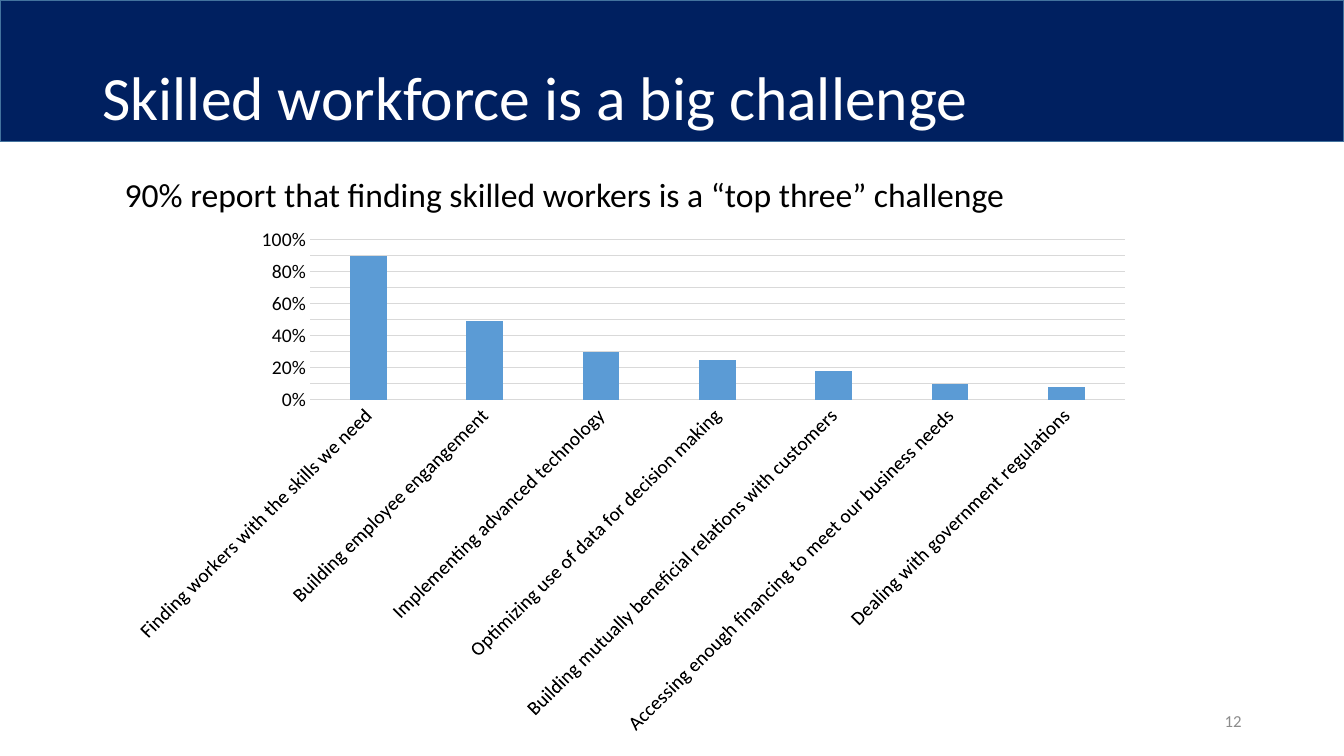
from pptx import Presentation
from pptx.chart.data import CategoryChartData
from pptx.dml.color import RGBColor
from pptx.enum.chart import XL_CHART_TYPE, XL_TICK_MARK
from pptx.enum.shapes import MSO_SHAPE
from pptx.enum.text import MSO_ANCHOR, MSO_AUTO_SIZE, PP_ALIGN
from pptx.util import Pt

HEADLINE = "Skilled workforce is a big challenge"
FINDING = "90% report that finding skilled workers is a “top three” challenge"
PAGE = "12"
CHALLENGES = {
    "Finding workers with the skills we need": 0.9,
    "Building employee engangement": 0.49,
    "Implementing advanced technology": 0.3,
    "Optimizing use of data for decision making": 0.25,
    "Building mutually beneficial relations with customers": 0.18,
    "Accessing enough financing to meet our business needs": 0.1,
    "Dealing with government regulations": 0.08,
}
COLORS = {
    "navy": "002060", "edge": "43739E", "white": "FFFFFF", "black": "000000",
    "gray": "8C8C8C", "grid": "D9D9D9", "bar": "5B9BD5",
}
WIDTH, HEIGHT = 960, 540
BOXES = {
    "band": (0, 0, WIDTH, 101),
    "headline": (66, 19.5, 828, 104.4),
    "finding": (82, 121, 752.4, 36),
    "page": (678, 500.5, 216, 28.8),
    "chart": (82, 162.7, 736, 362.2),
}


def color(name):
    return RGBColor.from_string(COLORS[name])


def place(name):
    return [Pt(length) for length in BOXES[name]]


def set_font(font, size, color_name):
    for attribute, value in {"name": "Calibri", "size": Pt(size), "bold": False}.items():
        setattr(font, attribute, value)
    font.color.rgb = color(color_name)


def write(shape, text, size, color_name, anchor, align=PP_ALIGN.LEFT):
    frame = shape.text_frame
    settings = {"text": text, "word_wrap": True,
                "auto_size": MSO_AUTO_SIZE.NONE, "vertical_anchor": anchor}
    for attribute, value in settings.items():
        setattr(frame, attribute, value)
    paragraph = frame.paragraphs[0]
    paragraph.alignment = align
    set_font(paragraph.runs[0].font, size, color_name)
    return paragraph


def set_line(line, color_name, width):
    line.color.rgb = color(color_name)
    line.width = Pt(width)


deck = Presentation()
deck.slide_width, deck.slide_height = Pt(WIDTH), Pt(HEIGHT)
slide = deck.slides.add_slide(deck.slide_layouts[5])
shapes = slide.shapes

band = shapes.add_shape(MSO_SHAPE.RECTANGLE, *place("band"))
band.shadow.inherit = False
band.fill.solid()
band.fill.fore_color.rgb = color("navy")
set_line(band.line, "edge", 1)
headline = shapes.title
band.element.addnext(headline.element)

headline.left, headline.top, headline.width, headline.height = place("headline")
write(headline, HEADLINE, 44, "white", MSO_ANCHOR.MIDDLE).line_spacing = 0.9
write(shapes.add_textbox(*place("finding")), FINDING, 24, "black", MSO_ANCHOR.TOP)
write(shapes.add_textbox(*place("page")), PAGE, 12, "gray", MSO_ANCHOR.MIDDLE, PP_ALIGN.RIGHT)

survey = CategoryChartData(number_format="0%")
survey.categories = list(CHALLENGES)
survey.add_series("Series 1", list(CHALLENGES.values()))
chart = shapes.add_chart(XL_CHART_TYPE.COLUMN_CLUSTERED, *place("chart"), survey).chart
chart.has_legend = chart.has_title = False
set_font(chart.font, 14, "black")

columns = chart.plots[0]
columns.gap_width, columns.overlap, columns.vary_by_categories = 219, -27, False
bars = columns.series[0].format.fill
bars.solid()
bars.fore_color.rgb = color("bar")

challenge_axis, share_axis = chart.category_axis, chart.value_axis
for axis in (challenge_axis, share_axis):
    axis.major_tick_mark = axis.minor_tick_mark = XL_TICK_MARK.NONE
    set_font(axis.tick_labels.font, 14, "black")
set_line(challenge_axis.format.line, "grid", 0.75)
for body in chart.element.xpath(".//c:catAx/c:txPr/a:bodyPr"):
    body.set("rot", "-2700000")
    body.set("vert", "horz")

for attribute, value in {"minimum_scale": 0, "maximum_scale": 1, "major_unit": 0.1,
                         "has_major_gridlines": True}.items():
    setattr(share_axis, attribute, value)
share_axis.tick_labels.number_format = "0%"
share_axis.tick_labels.number_format_is_linked = False
share_axis.format.line.fill.background()
set_line(share_axis.major_gridlines.format.line, "grid", 0.75)

deck.save("out.pptx")
